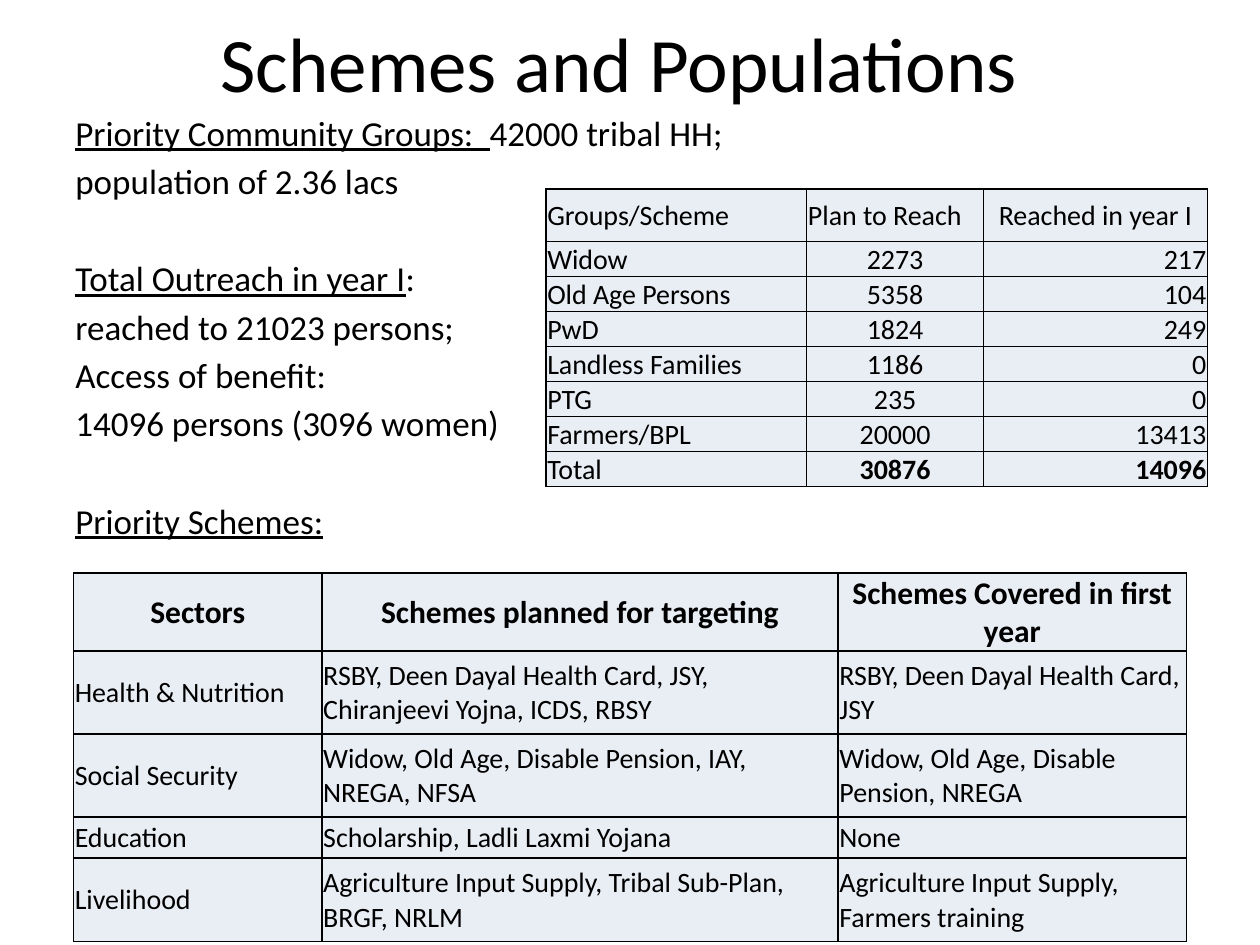
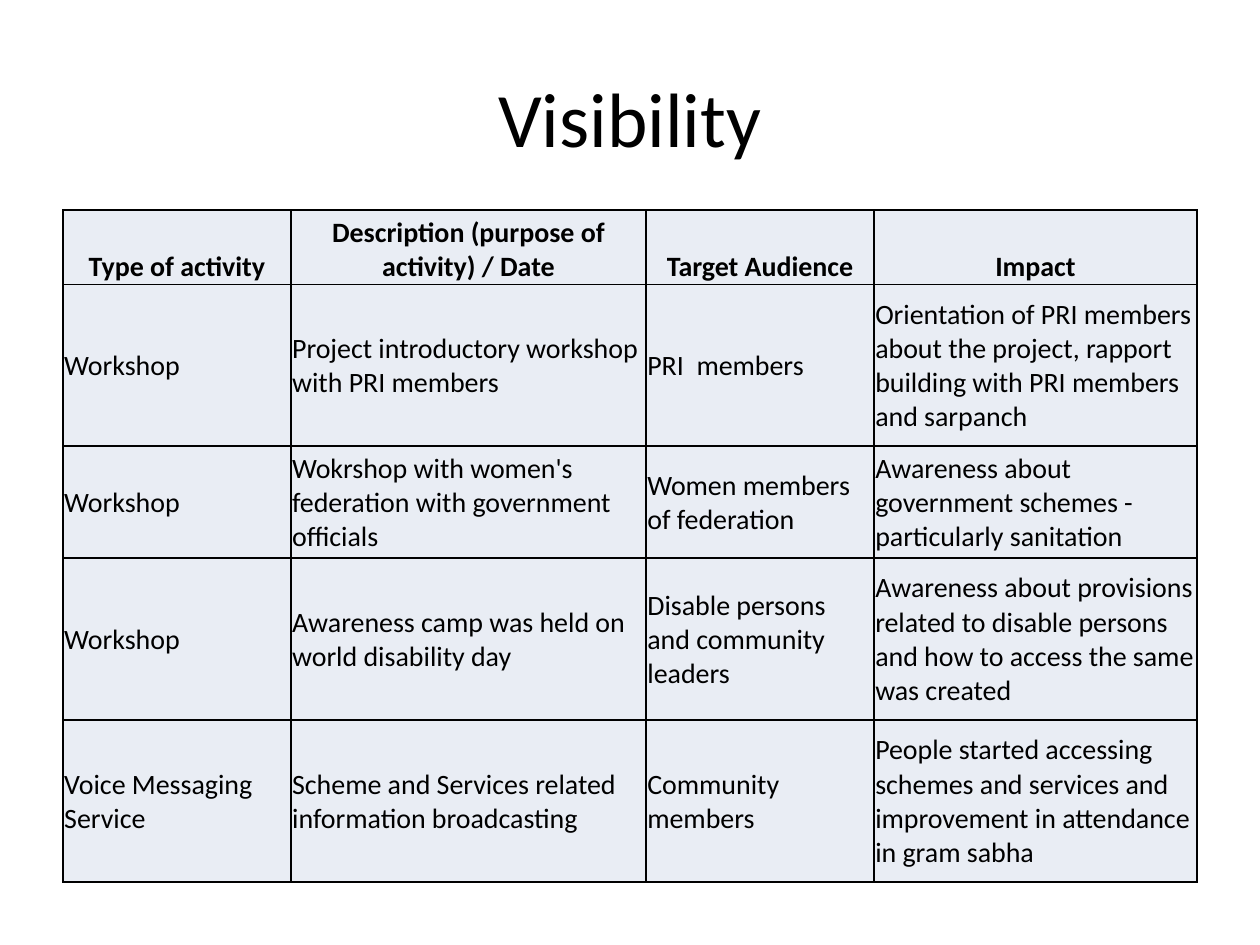
import pptx
import pptx.util
import pptx.oxml
import pptx.oxml.ns
import pptx.dml.color
import pptx.enum.text

Pt = pptx.util.Pt
Align = pptx.enum.text.PP_ALIGN
Anchor = pptx.enum.text.MSO_ANCHOR

BLACK = pptx.dml.color.RGBColor(0x00, 0x00, 0x00)
PALE = pptx.dml.color.RGBColor(0xE9, 0xED, 0xF4)
FONT = "Calibri"
LEFT, MID, RIGHT = Align.LEFT, Align.CENTER, Align.RIGHT
GAP = 3.6    # space above each line of the summary
LINE = 28    # pitch of the summary lines

# Each line: space above, underlined lead, plain rest
SUMMARY = [
    (GAP, "Priority Community Groups:  ", "42000 tribal HH;"),
    (GAP, "", "population of 2.36 lacs"),
    (GAP + LINE, "Total Outreach in year I", ":"),
    (GAP, "", "reached to 21023 persons;"),
    (GAP, "", "Access of benefit:"),
    (GAP, "", "14096 persons (3096 women)"),
    (GAP + LINE, "Priority Schemes:", ""),
]

SCHEMES = [
    ("Sectors", "Schemes planned for targeting", "Schemes Covered in first year"),
    ("Health & Nutrition",
     "RSBY, Deen Dayal Health Card, JSY, Chiranjeevi Yojna, ICDS, RBSY",
     "RSBY, Deen Dayal Health Card, JSY"),
    ("Social Security",
     "Widow, Old Age, Disable Pension, IAY, NREGA, NFSA",
     "Widow, Old Age, Disable Pension, NREGA"),
    ("Education", "Scholarship, Ladli Laxmi Yojana", "None"),
    ("Livelihood",
     "Agriculture Input Supply, Tribal Sub-Plan, BRGF, NRLM",
     "Agriculture Input Supply, Farmers training"),
]

GROUPS = [
    ("Groups/Scheme", "Plan to Reach", "Reached in year I"),
    ("Widow", "2273", "217"),
    ("Old Age Persons", "5358", "104"),
    ("PwD", "1824", "249"),
    ("Landless Families", "1186", "0"),
    ("PTG", "235", "0"),
    ("Farmers/BPL", "20000", "13413"),
    ("Total", "30876", "14096"),
]

EVENTS = [
    ("Type of activity", "Description (purpose of activity) / Date",
     "Target Audience", "Impact"),
    ("Workshop", "Project introductory workshop with PRI members",
     "PRI  members",
     "Orientation of PRI members about the project, rapport building "
     "with PRI members and sarpanch"),
    ("Workshop", "Wokrshop with women's federation with government officials",
     "Women members of federation",
     "Awareness about government schemes - particularly sanitation"),
    ("Workshop", "Awareness camp was held on world disability day",
     "Disable persons and community leaders",
     "Awareness about provisions related to disable persons and how to "
     "access the same was created"),
    ("Voice Messaging Service",
     "Scheme and Services related information broadcasting",
     "Community members",
     "People started accessing schemes and services and improvement in "
     "attendance in gram sabha"),
]


def write(par, text, size=16, bold=False, under=False, align=LEFT):
    par.alignment = align
    run = par.add_run()
    run.text = text
    font = run.font
    font.name, font.size = FONT, Pt(size)
    font.bold, font.underline = bold, under
    font.color.rgb = BLACK


def add_box(slide, left, top, width, height, anchor=Anchor.TOP):
    box = slide.shapes.add_textbox(Pt(left), Pt(top), Pt(width), Pt(height))
    frame = box.text_frame
    frame.word_wrap = True
    frame.vertical_anchor = anchor
    return frame


def add_title(slide, text, left, top, height):
    frame = add_box(slide, left, top, 648, height, Anchor.MIDDLE)
    write(frame.paragraphs[0], text, size=44, align=MID)


def add_summary(slide):
    frame = add_box(slide, 36, 60, 648, 456)
    for row, (space, lead, rest) in enumerate(SUMMARY):
        par = frame.add_paragraph() if row else frame.paragraphs[0]
        par.space_before = Pt(space)
        if lead:
            write(par, lead, size=20, under=True)
        if rest:
            write(par, rest, size=20)


def add_border(cell):
    props = cell._tc.get_or_add_tcPr()
    for side in "LRTB":
        props.append(pptx.oxml.parse_xml(
            f'<a:ln{side} {pptx.oxml.ns.nsdecls("a")} w="12700"><a:solidFill>'
            f'<a:srgbClr val="{BLACK}"/></a:solidFill></a:ln{side}>'))


def style_cell(cell, anchor):
    cell.margin_left = cell.margin_right = cell.margin_top = Pt(0.72)
    cell.margin_bottom = 0
    cell.vertical_anchor = anchor
    add_border(cell)
    cell.fill.solid()
    cell.fill.fore_color.rgb = PALE


def add_grid(slide, data, left, top, widths, heights, head, aligns, tops=None,
             anchor=Anchor.MIDDLE, bold=()):
    """Add a table; head formats the first row, tops aligns it (centred if
    not given), anchor places its text, bold lists further bold cells."""
    grid = slide.shapes.add_table(
        len(data), len(widths), Pt(left), Pt(top),
        Pt(sum(widths)), Pt(sum(heights))).table
    grid.first_row = grid.horz_banding = False
    for col, width in zip(grid.columns, widths):
        col.width = Pt(width)
    for row, height in zip(grid.rows, heights):
        row.height = Pt(height)
    tops = tops or [MID] * len(widths)
    for r, row in enumerate(data):
        for c, text in enumerate(row):
            cell = grid.cell(r, c)
            style_cell(cell, Anchor.MIDDLE if r else anchor)
            look = {"bold": (r, c) in bold} if r else head
            write(cell.text_frame.paragraphs[0], text,
                  align=(aligns if r else tops)[c], **look)


def add_schemes(deck):
    slide = deck.slides.add_slide(deck.slide_layouts[6])
    add_title(slide, "Schemes and Populations", 30, 1, 68)
    add_summary(slide)
    add_grid(slide, SCHEMES, 42, 327.5, [142, 295, 199],
             [44.5, 47.5, 47.5, 23.5, 47.5],
             {"size": 18, "bold": True}, [LEFT] * 3)
    last = len(GROUPS) - 1
    add_grid(slide, GROUPS, 312, 108, [149, 101, 128], [30] + [20] * last,
             {}, [LEFT, MID, RIGHT], tops=[LEFT, LEFT, MID],
             bold={(last, 1), (last, 2)})


def add_events(deck):
    slide = deck.slides.add_slide(deck.slide_layouts[6])
    add_title(slide, "Visibility", 36, 21.6, 90)
    add_grid(slide, EVENTS, 36, 120, [130.25, 203, 130.25, 184.5],
             [42.5, 92.5, 64, 92.5, 92.5],
             {"bold": True}, [LEFT] * 4, anchor=Anchor.BOTTOM)


def main():
    deck = pptx.Presentation()
    deck.slide_width, deck.slide_height = Pt(720), Pt(540)
    add_schemes(deck)
    add_events(deck)
    deck.save("out.pptx")


if __name__ == "__main__":
    main()
